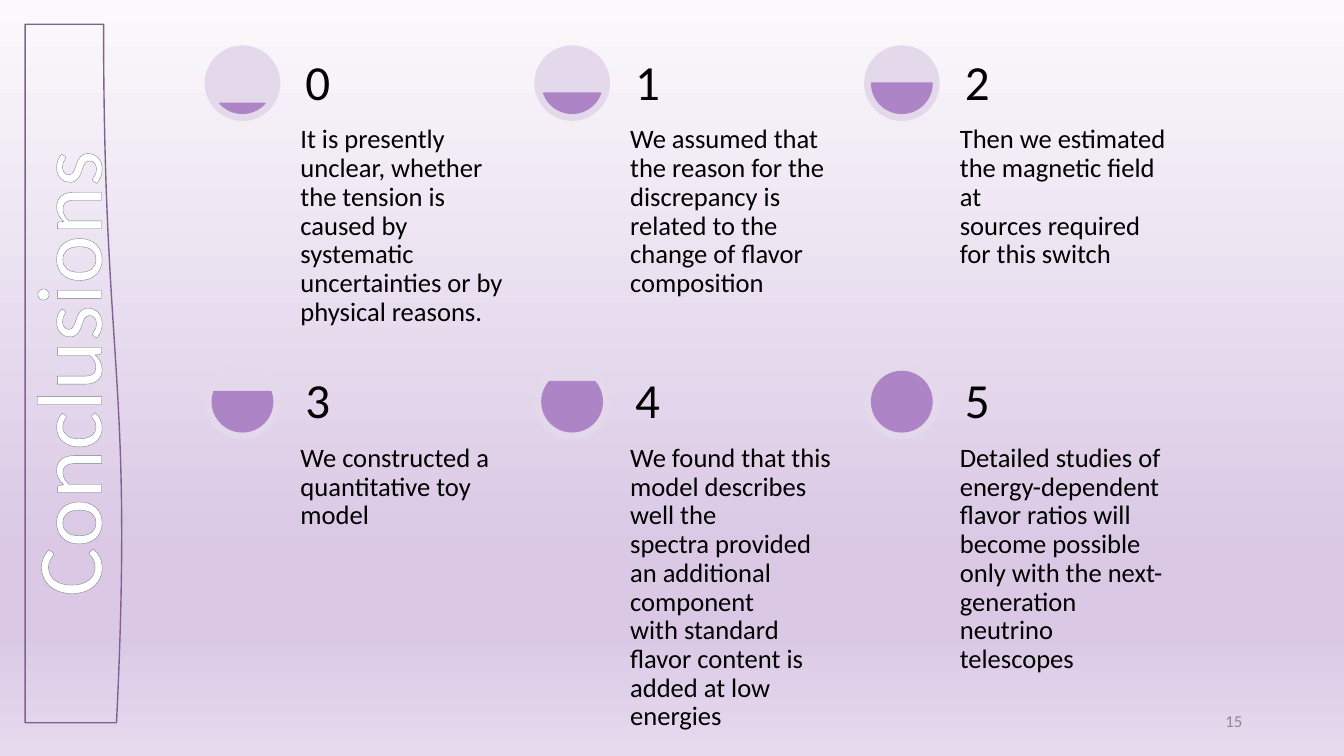
from dataclasses import dataclass
from math import asin, degrees

from lxml.etree import SubElement
from pptx import Presentation
from pptx.dml.color import RGBColor
from pptx.enum.shapes import MSO_SHAPE
from pptx.enum.text import MSO_ANCHOR, MSO_AUTO_SIZE, PP_ALIGN
from pptx.oxml.ns import qn
from pptx.util import Inches, Pt

FONT = "Calibri"
COLUMNS = 3
LEFT, TOP = 2.03, 0.45
COLUMN, ROW = 3.27, 3.16
DISC, RIM = 0.75, 0.075
INDENT, TEXT_WIDTH, TEXT_HEIGHT = 0.9, 2.21, 3.14
BANNER = (-2.73, 3.22, 6.93, 0.97)
BACKGROUND = [(0, "FBF9FC"), (74, "DAC8E5"), (83, "DAC8E5"), (100, "E6DAEE")]


@dataclass
class Conclusion:
    number: int
    text: str


CONCLUSIONS = [
    Conclusion(0, "It is presently unclear, whether the tension is caused by "
                  "systematic uncertainties or by\nphysical reasons."),
    Conclusion(1, "We assumed that the reason for the discrepancy is related to "
                  "the change of flavor composition"),
    Conclusion(2, "Then we estimated the magnetic field at\n"
                  "sources required for this switch"),
    Conclusion(3, "We constructed a quantitative toy model"),
    Conclusion(4, "We found that this model describes well the\n"
                  "spectra provided an additional component\n"
                  "with standard flavor content is added at low energies"),
    Conclusion(5, "Detailed studies of energy-dependent flavor ratios will become "
                  "possible only with the next-generation neutrino telescopes"),
]


def color(value: str) -> RGBColor:
    """Turn a hex string into a colour."""
    return RGBColor.from_string(value)


def add_run(p, text: str, size: float, ink: str):
    """Add one formatted run to a paragraph."""
    r = p.add_run()
    r.text = text
    r.font.name, r.font.size = FONT, Pt(size)
    r.font.color.rgb = color(ink)
    return r


def add_panel(shapes, x: float, y: float, width: float, height: float):
    """Add an invisible rectangular outline that holds text."""
    left, top, right, bottom = map(Inches, (x, y, x + width, y + height))
    builder = shapes.build_freeform(left, top)
    builder.add_line_segments([(right, top), (right, bottom), (left, bottom)])
    sp = builder.convert_to_shape()
    sp.shadow.inherit = False
    sp.fill.background()
    sp.line.fill.background()
    return sp


def write(sp, text: str, size: float, inset: float, anchor=MSO_ANCHOR.TOP,
          align=PP_ALIGN.LEFT, ink: str = "000000", spacing: float = 0.9) -> None:
    """Fill a shape with wrapped text whose lines are split by breaks."""
    tf = sp.text_frame
    tf.word_wrap, tf.vertical_anchor = True, anchor
    tf.margin_left = tf.margin_right = Inches(inset)
    tf.margin_top = tf.margin_bottom = Inches(inset)
    p = tf.paragraphs[0]
    p.alignment, p.line_spacing = align, spacing
    for i, line in enumerate(text.split("\n")):
        if i:
            p.add_line_break()
        add_run(p, line, size, ink)


def add_disc(shapes, kind, x: float, y: float, size: float, fill: str):
    """Add a filled round shape without an outline."""
    sp = shapes.add_shape(kind, *map(Inches, (x, y, size, size)))
    sp.shadow.inherit = False
    sp.fill.solid()
    sp.fill.fore_color.rgb = color(fill)
    sp.line.fill.background()
    return sp


def add_conclusion(s, item: Conclusion) -> None:
    """Draw one grid cell: a progress disc, a number and its text."""
    row, column = divmod(item.number, COLUMNS)
    x, y = LEFT + column * COLUMN, TOP + row * ROW
    shapes = s.shapes.add_group_shape().shapes
    add_disc(shapes, MSO_SHAPE.OVAL, x, y, DISC, "E3D9EA")
    level = add_disc(shapes, MSO_SHAPE.CHORD, x + RIM, y + RIM,
                     DISC - 2 * RIM, "AD84C6")
    level.line.color.rgb, level.line.width = color("AD84C6"), Pt(1)
    share = (item.number + 1) / len(CONCLUSIONS)
    angle = degrees(asin(1 - 2 * share))
    level.adjustments[0] = angle % 360 * 0.6
    level.adjustments[1] = (180 - angle) * 0.6
    body = add_panel(shapes, x + INDENT, y + DISC, TEXT_WIDTH, TEXT_HEIGHT)
    write(body, item.text, 19, 0.05)
    head = add_panel(shapes, x + INDENT, y, TEXT_WIDTH, DISC)
    write(head, str(item.number), 35, 0.1, MSO_ANCHOR.BOTTOM)


def set_background(s) -> None:
    """Fill the slide with a vertical gradient."""
    fill = s.background.fill
    fill.gradient()
    fill.gradient_angle = 270
    stops = next(s.element.iter(qn("a:gsLst")))
    for stop in list(stops):
        stops.remove(stop)
    for position, value in BACKGROUND:
        stop = SubElement(stops, qn("a:gs"), pos=str(position * 1000))
        SubElement(stop, qn("a:srgbClr"), val=value)


def add_banner(s) -> None:
    """Draw the upright wavy frame around the title."""
    sp = s.shapes.add_shape(MSO_SHAPE.FLOWCHART_DOCUMENT, *map(Inches, BANNER))
    sp.rotation = 270
    sp.shadow.inherit = False
    sp.fill.background()
    sp.line.color.rgb, sp.line.width = color("806292"), Pt(1)


def set_title(s, text: str) -> None:
    """Turn the title upright and outline its letters."""
    sp = s.shapes.title
    sp.left, sp.top, sp.width, sp.height = map(Inches, BANNER)
    sp.rotation = 270
    tf = sp.text_frame
    tf.auto_size, tf.vertical_anchor = MSO_AUTO_SIZE.NONE, MSO_ANCHOR.MIDDLE
    tf.margin_bottom = Inches(0.24)
    p = tf.paragraphs[0]
    p.alignment = PP_ALIGN.CENTER
    props = add_run(p, text, 66, "FFFFFF")._r.get_or_add_rPr()
    outline = SubElement(props, qn("a:ln"), w=str(Pt(0.75)))
    SubElement(SubElement(outline, qn("a:solidFill")), qn("a:srgbClr"), val="6F8183")
    props.insert(0, outline)


def main() -> None:
    """Build and save the slide."""
    prs = Presentation()
    prs.slide_width, prs.slide_height = Inches(13.33), Inches(7.5)
    s = prs.slides.add_slide(prs.slide_layouts[5])
    set_background(s)
    set_title(s, "Conclusions")
    add_banner(s)
    for item in CONCLUSIONS:
        add_conclusion(s, item)
    page = s.shapes.add_textbox(*map(Inches, (9.42, 6.95, 3, 0.4)))
    write(page, "15", 12, 0.1, MSO_ANCHOR.MIDDLE, PP_ALIGN.RIGHT, "8C8C8C", 1.0)
    prs.save("out.pptx")


if __name__ == "__main__":
    main()
